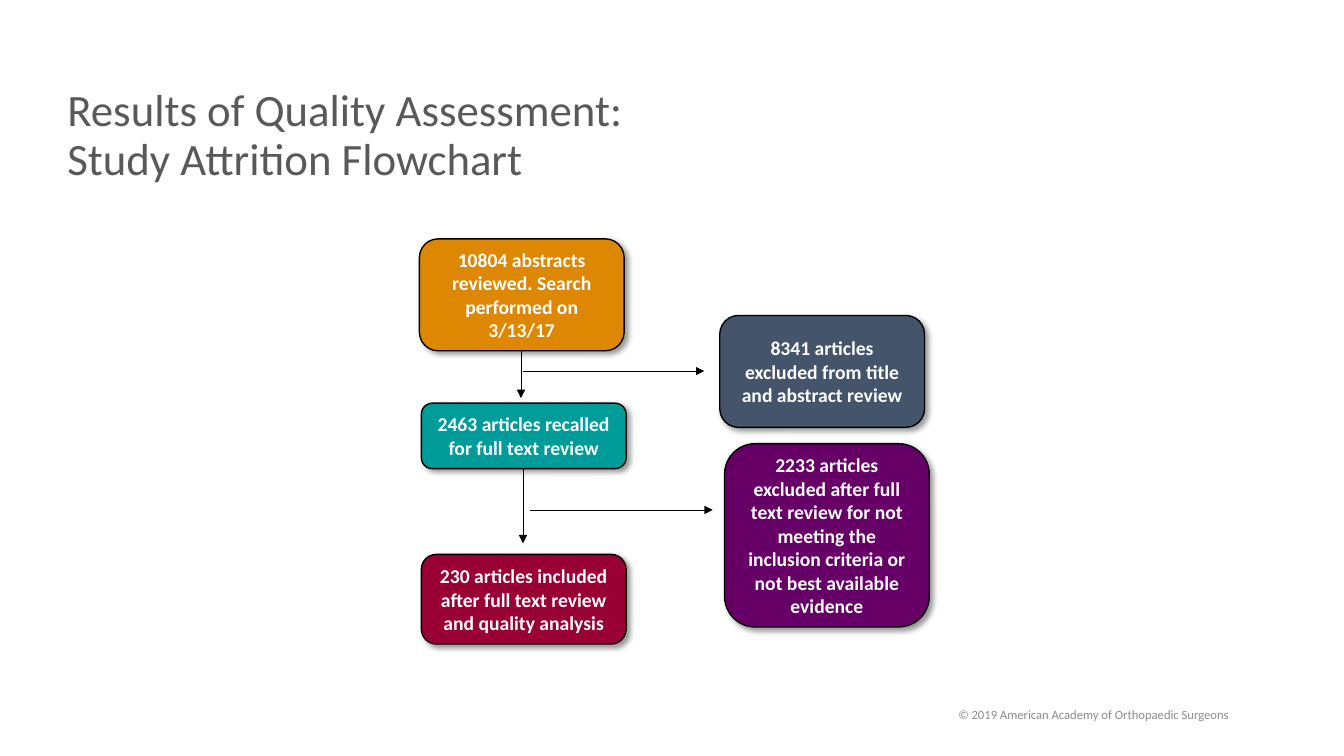
from lxml import etree
from pptx import Presentation
from pptx.dml.color import RGBColor
from pptx.enum.shapes import MSO_CONNECTOR, MSO_SHAPE
from pptx.enum.text import MSO_ANCHOR, PP_ALIGN
from pptx.oxml import parse_xml
from pptx.oxml.ns import nsdecls, qn
from pptx.util import Cm, Pt

TITLE = ["Results of Quality Assessment:", "Study Attrition Flowchart"]
COPYRIGHT = ["© 2019 American Academy of Orthopaedic Surgeons"]

BOX_WIDTH = 5.16
# text, fill, left, top, height (cm)
BOXES = [
    ("8341 articles excluded from title and abstract review", "44546A", 18.14, 7.95, 2.82),
    ("10804 abstracts reviewed. Search performed on 3/13/17", "DE8703", 10.57, 6.02, 2.82),
    ("2463 articles recalled for full text review", "009C99", 10.62, 10.16, 1.65),
    ("2233 articles excluded after full text review for not meeting the inclusion "
     "criteria or not best available evidence", "660066", 18.26, 11.18, 4.62),
    ("230 articles included after full text review and quality analysis",
     "990033", 10.62, 13.97, 2.26),
]
# start x, start y, end x, end y (cm)
ARROWS = [
    (13.18, 9.35, 17.75, 9.35),
    (13.18, 10.85, 13.18, 13.69),
    (13.36, 12.85, 17.96, 12.85),
    (13.13, 7.19, 13.13, 10.03),
]


def color(value):
    return RGBColor.from_string(value)


def write(shape, lines, size, ink, bold=False, align=PP_ALIGN.LEFT, spacing=1.0):
    frame = shape.text_frame
    frame.word_wrap = True
    frame.vertical_anchor = MSO_ANCHOR.MIDDLE
    for index, line in enumerate(lines):
        paragraph = frame.paragraphs[0] if index == 0 else frame.add_paragraph()
        paragraph.text = line
        paragraph.alignment = align
        paragraph.line_spacing = spacing
        font = paragraph.font
        font.name, font.size, font.bold = "Calibri", Pt(size), bold
        font.color.rgb = color(ink)


def add_arrow(slide, *ends):
    arrow = slide.shapes.add_connector(MSO_CONNECTOR.STRAIGHT, *map(Cm, ends))
    arrow.line.width = Pt(0.5)
    arrow.line.color.rgb = color("000000")
    etree.SubElement(arrow.line._get_or_add_ln(), qn("a:tailEnd"), type="triangle")
    etree.SubElement(arrow._element.spPr, qn("a:effectLst"))


def add_box(slide, text, fill, left, top, height):
    box = slide.shapes.add_shape(MSO_SHAPE.ROUNDED_RECTANGLE,
                                 Cm(left), Cm(top), Cm(BOX_WIDTH), Cm(height))
    box.fill.solid()
    box.fill.fore_color.rgb = color(fill)
    box.line.color.rgb = color("000000")
    box.line.width = Pt(1)
    box.shadow.inherit = False
    box._element.spPr.find(qn("a:effectLst")).append(parse_xml(
        f'<a:outerShdw {nsdecls("a")} blurRad="{Pt(4)}" dist="{Pt(3)}" dir="2700000" '
        'algn="tl" rotWithShape="0"><a:srgbClr val="000000"><a:alpha val="40000"/>'
        '</a:srgbClr></a:outerShdw>'))
    write(box, [text], 14, "FFFFFF", bold=True, align=PP_ALIGN.CENTER)


def main():
    presentation = Presentation()
    presentation.slide_width, presentation.slide_height = Cm(33.87), Cm(19.05)
    slide = presentation.slides.add_slide(presentation.slide_layouts[6])

    footer = slide.shapes.add_textbox(Cm(21.84), Cm(17.5), Cm(11.43), Cm(1.02))
    write(footer, COPYRIGHT, 9, "8C8C8C", align=PP_ALIGN.CENTER)
    title = slide.shapes.add_textbox(Cm(1.45), Cm(1.7), Cm(15.44), Cm(3.48))
    write(title, TITLE, 32, "595959", spacing=0.9)

    for arrow in ARROWS:
        add_arrow(slide, *arrow)
    for box in BOXES:
        add_box(slide, *box)

    presentation.save("out.pptx")


if __name__ == "__main__":
    main()
